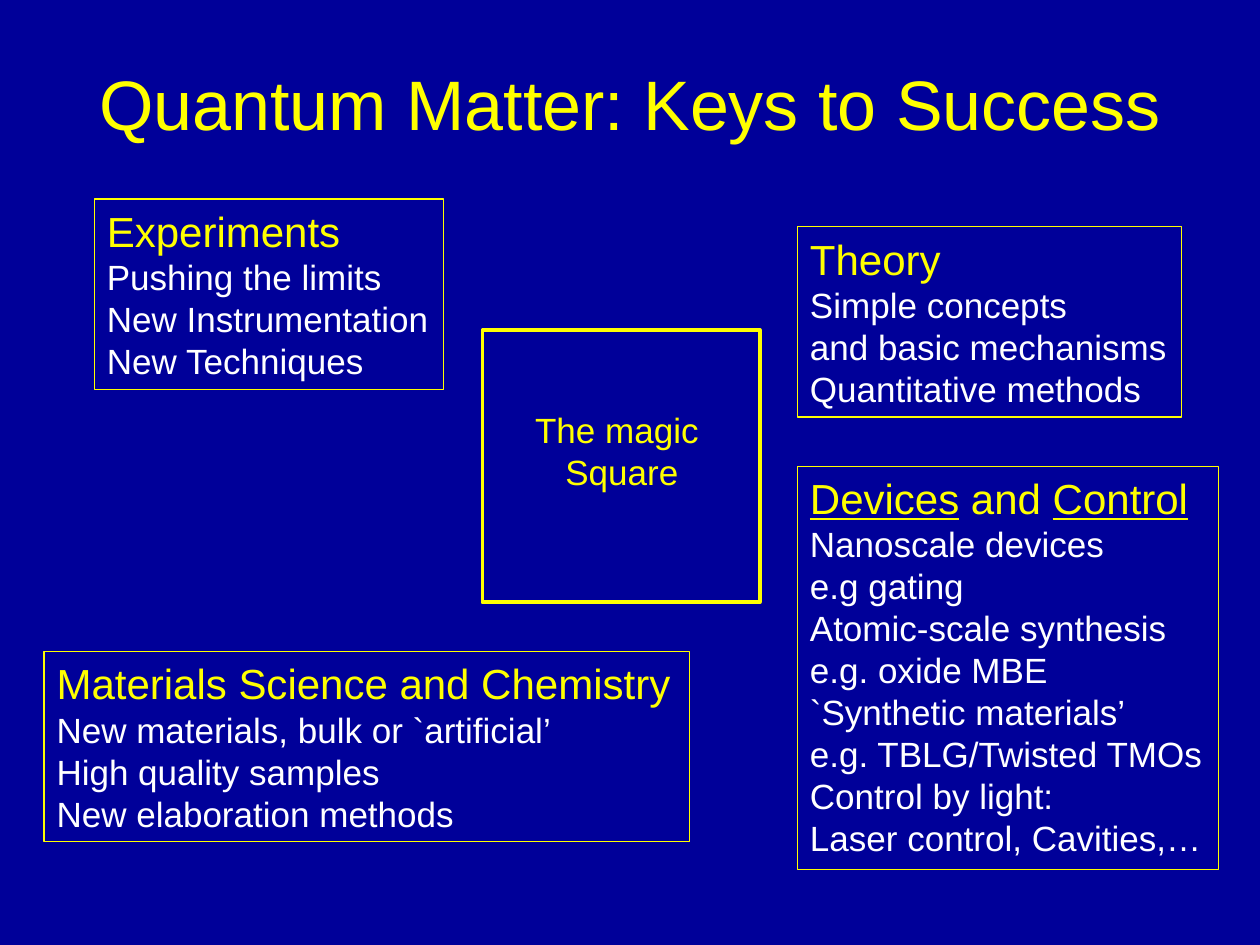
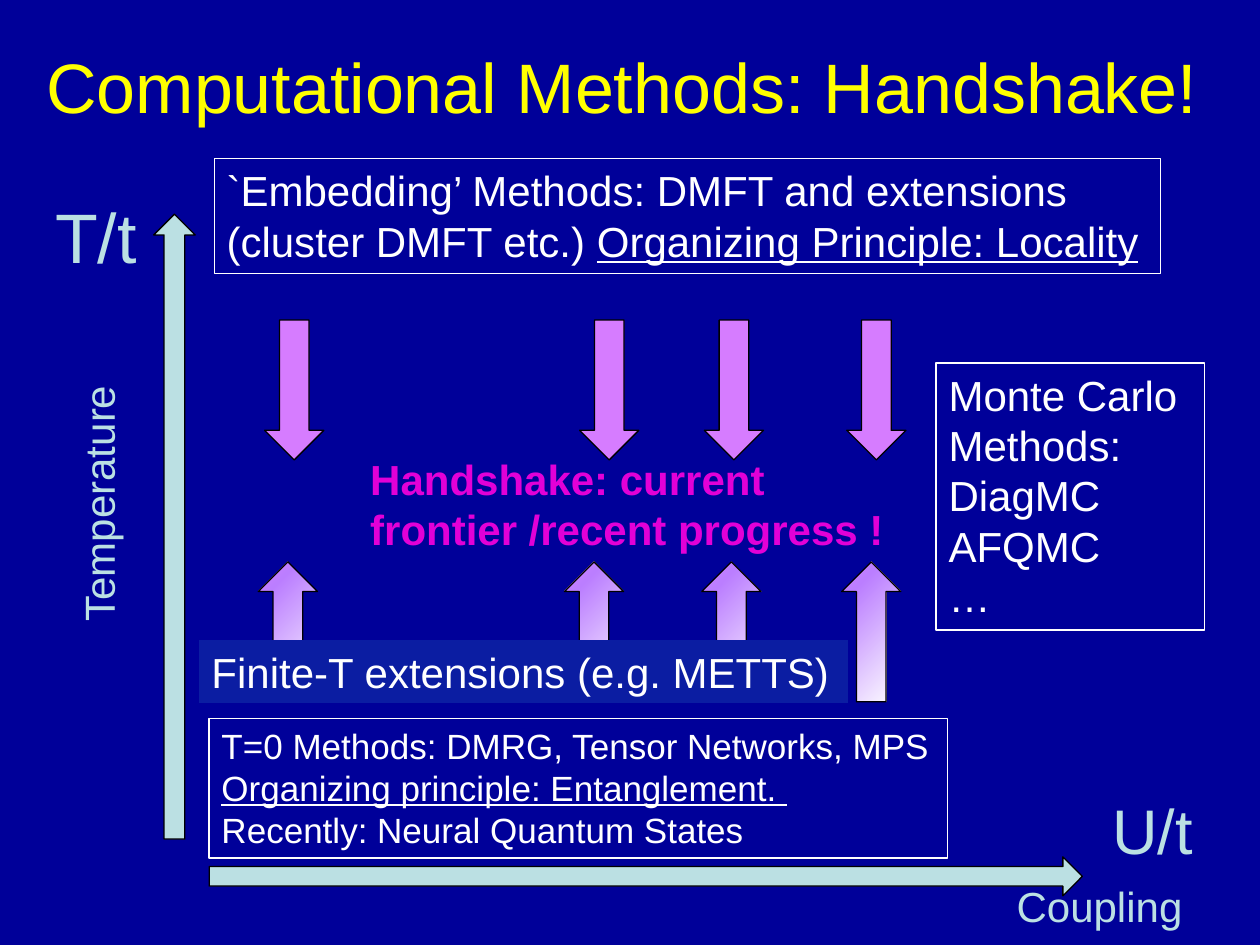
from lxml import etree
from pptx import Presentation
from pptx import util as u
from pptx.dml.color import RGBColor
from pptx.enum import shapes, text
from pptx.oxml import ns

NAVY = RGBColor(0x00, 0x00, 0x99)
BAND = RGBColor(0x0B, 0x1D, 0xA2)
YELLOW = RGBColor(0xFF, 0xFF, 0x00)
WHITE = RGBColor(0xFF, 0xFF, 0xFF)
BLACK = RGBColor(0x00, 0x00, 0x00)
PALE = RGBColor(0xBB, 0xE0, 0xE3)
LILAC = RGBColor(0xD6, 0x7C, 0xFF)
VIOLET = RGBColor(0xBB, 0x7E, 0xFF)
MAGENTA = RGBColor(0xE2, 0x00, 0xD7)
FONT = "Arial"
LEFT, CENTER = text.PP_ALIGN.LEFT, text.PP_ALIGN.CENTER


class Deck:
    def __init__(self):
        self.deck = Presentation()
        self.deck.slide_width = u.Inches(10)
        self.deck.slide_height = u.Inches(7.5)
        self.page = None

    def new_page(self, title, place, align=CENTER):
        self.page = self.deck.slides.add_slide(self.deck.slide_layouts[6])
        self.page.background.fill.solid()
        self.page.background.fill.fore_color.rgb = NAVY
        box = self.label(place, [title], 40, YELLOW, align=align, wrap=True)
        box.text_frame.vertical_anchor = text.MSO_ANCHOR.MIDDLE

    def set_lines(self, box, lines, size, color, heading=False, align=LEFT,
                  bold=False, wrap=False):
        """Fill a box; parts between underscores are underlined."""
        frame = box.text_frame
        frame.word_wrap = wrap
        frame.vertical_anchor = text.MSO_ANCHOR.TOP
        for index, line in enumerate(lines):
            para = frame.paragraphs[0] if index == 0 else frame.add_paragraph()
            para.alignment = align
            is_heading = heading and index == 0
            for part, words in enumerate(line.split("_")):
                if not words:
                    continue
                span = para.add_run()
                span.text = words
                span.font.name = FONT
                span.font.size = u.Pt(24 if is_heading else size)
                span.font.color.rgb = YELLOW if is_heading else color
                span.font.bold = bold
                span.font.underline = part % 2 == 1

    def label(self, place, lines, size, color, turn=0, **style):
        box = self.page.shapes.add_textbox(*map(u.Inches, place))
        box.rotation = turn
        self.set_lines(box, lines, size, color, **style)
        return box

    def shape(self, kind, place, fill=None, line=None, width=0.75):
        box = self.page.shapes.add_shape(kind, *map(u.Inches, place))
        box.shadow.inherit = False
        if fill is None:
            box.fill.background()
        else:
            box.fill.solid()
            box.fill.fore_color.rgb = fill
        if line is None:
            box.line.fill.background()
        else:
            box.line.color.rgb = line
            box.line.width = u.Pt(width)
        return box

    def panel(self, place, lines, size, line=WHITE, fill=None, heading=False):
        box = self.shape(shapes.MSO_SHAPE.RECTANGLE, place, fill, line)
        self.set_lines(box, lines, size, WHITE, heading)

    def arrow(self, place, fill, turn=0):
        arrow = self.shape(shapes.MSO_SHAPE.UP_ARROW, place, fill, BLACK)
        arrow.rotation = turn
        return arrow

    def glowing_arrow(self, place):
        """Up arrow with a gradient spreading from its top left corner."""
        arrow = self.arrow(place, LILAC)
        arrow.fill.gradient()
        gradient = arrow.element.spPr.find(ns.qn("a:gradFill"))
        for child in list(gradient):
            gradient.remove(child)
        stops = etree.SubElement(gradient, ns.qn("a:gsLst"))
        for percent, color in ((0, LILAC), (20, VIOLET), (100, WHITE)):
            stop = etree.SubElement(stops, ns.qn("a:gs"), pos=str(percent * 1000))
            etree.SubElement(stop, ns.qn("a:srgbClr"), val=str(color))
        spread = etree.SubElement(gradient, ns.qn("a:path"))
        spread.set("path", "circle")
        etree.SubElement(spread, ns.qn("a:fillToRect"), r="100000", b="100000")


def keys_to_success(deck):
    deck.new_page("Quantum Matter: Keys to Success", (0.5, 0.43, 9, 0.77))

    # Four corners
    corners = [
        ((0.35, 5.17, 5.12, 1.51),
         ["Materials Science and Chemistry", "New materials, bulk or `artificial’",
          "High quality samples", "New elaboration methods"]),
        ((0.75, 1.58, 2.77, 1.51),
         ["Experiments", "Pushing the limits", "New Instrumentation",
          "New Techniques"]),
        ((6.33, 1.8, 3.05, 1.51),
         ["Theory", "Simple concepts", "and basic mechanisms",
          "Quantitative methods"]),
        ((6.33, 3.7, 3.34, 3.2),
         ["_Devices_ and _Control_", "Nanoscale devices", "e.g gating",
          "Atomic-scale synthesis", "e.g. oxide MBE", "`Synthetic materials’",
          "e.g. TBLG/Twisted TMOs", "Control by light:",
          "Laser control, Cavities,…"]),
    ]
    for place, lines in corners:
        deck.panel(place, lines, 20, YELLOW, heading=True)

    # Magic square
    deck.shape(shapes.MSO_SHAPE.RECTANGLE, (3.83, 2.62, 2.2, 2.16),
               line=YELLOW, width=2.25)
    deck.label((4.14, 3.19, 1.59, 0.77), ["The magic ", "Square"], 20, YELLOW,
               align=CENTER)


def computational_methods(deck):
    deck.new_page("Computational Methods: Handshake!", (0.27, 0.19, 9.54, 0.98),
                  LEFT)

    # Axes and their names
    deck.arrow((1.22, 1.7, 0.33, 4.96), PALE)
    deck.arrow((4.97, 3.49, 0.31, 6.93), PALE, 90)
    deck.label((0.34, 1.49, 0.86, 0.77), ["T/t"], 40, PALE)
    deck.label((-0.32, 3.68, 2.2, 0.5), ["Temperature"], 24, PALE, 270, wrap=True)
    deck.label((7.97, 6.94, 1.53, 0.5), ["Coupling"], 24, PALE)
    deck.label((8.73, 6.23, 0.85, 0.71), ["U/t"], 36, PALE)

    # Methods from above and from below
    deck.panel((1.7, 1.26, 7.51, 0.91),
               ["`Embedding’ Methods: DMFT and extensions",
                "(cluster DMFT etc.) _Organizing Principle: Locality_"], 24)
    deck.panel((1.66, 5.7, 5.86, 1.11),
               ["T=0 Methods: DMRG, Tensor Networks, MPS",
                "_Organizing principle: Entanglement. _",
                "Recently: Neural Quantum States"], 20)

    # Arrows that meet in the middle
    for left in (2.1, 4.6, 5.59, 6.72):
        deck.arrow((left, 2.54, 0.47, 1.11), LILAC, 180)
    for left in (2.05, 4.48, 5.57, 6.68):
        deck.glowing_arrow((left, 4.46, 0.47, 1.11))
    deck.label((2.84, 3.55, 4.3, 0.91),
               ["Handshake: current frontier /recent progress !"], 24, MAGENTA,
               bold=True, wrap=True)

    # Side panel and band
    deck.panel((7.43, 2.88, 2.13, 2.12),
               ["Monte Carlo", "Methods:", "DiagMC", "AFQMC", "…"], 24)
    deck.panel((1.58, 5.08, 5.15, 0.5), ["Finite-T extensions (e.g. METTS)"], 24,
               line=None, fill=BAND)


def main():
    deck = Deck()
    keys_to_success(deck)
    computational_methods(deck)
    deck.deck.save("out.pptx")


if __name__ == "__main__":
    main()
